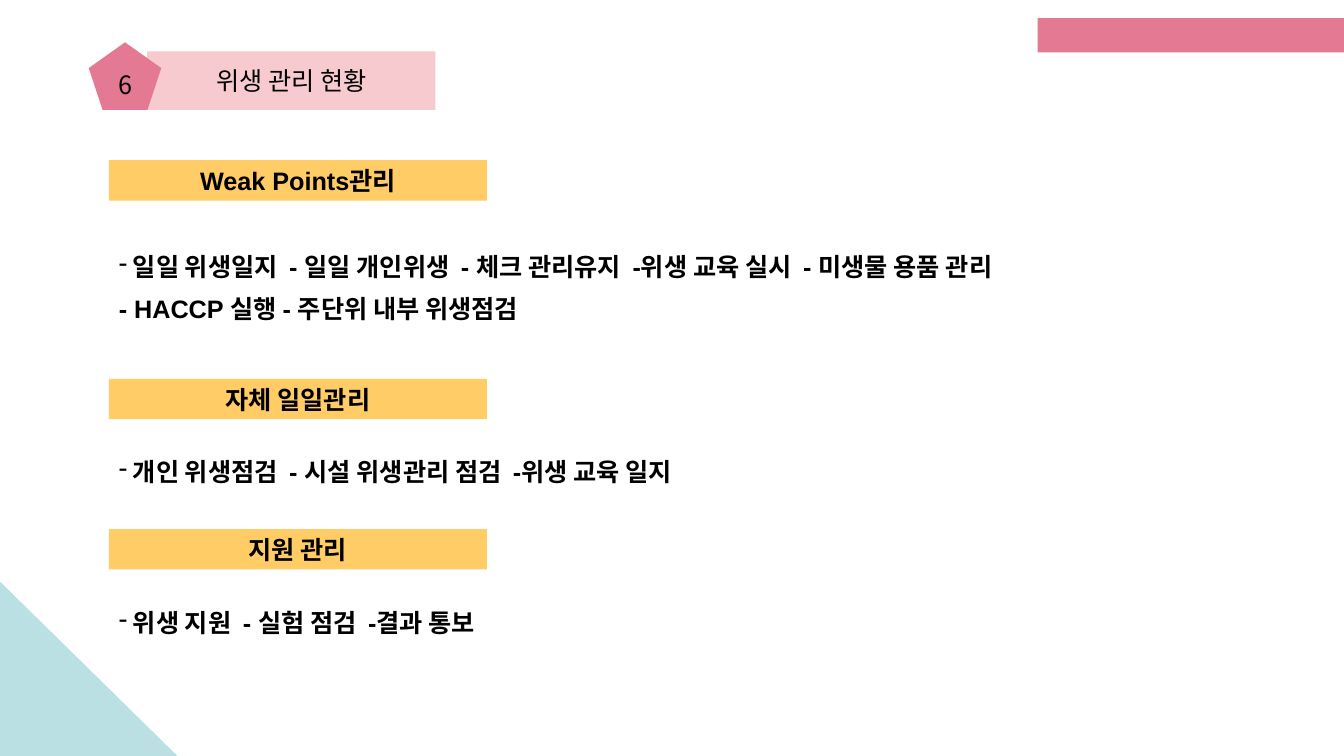
import pptx
import pptx.util
import pptx.dml.color
import pptx.enum.shapes
import pptx.enum.text
import pptx.oxml
import pptx.oxml.ns

Inches = pptx.util.Inches
KINDS = pptx.enum.shapes.MSO_SHAPE
ALIGN = pptx.enum.text.PP_ALIGN
KOREAN = "Noto Sans CJK KR"
LEFT = 1.08
PINK, PALE, AMBER, AQUA = "E37992", "F7CACF", "FFCC66", "BAE0E3"
PLAIN = {"name": KOREAN, "size": pptx.util.Pt(18), "bold": False}
STRONG = {"name": "Arial", "size": pptx.util.Pt(18), "bold": True}

# Top of heading, heading, top and height of the list, lines of the list
SECTIONS = [
    (1.59, "Weak Points관리", 2.15, 1.28,
     [" 일일 위생일지  - 일일 개인위생  - 체크 관리유지  -위생 교육 실시  - 미생물 용품 관리",
      "- HACCP 실행 - 주단위 내부 위생점검"]),
    (3.76, "자체 일일관리", 4.31, 0.61,
     [" 개인 위생점검  - 시설 위생관리 점검  -위생 교육 일지"]),
    (5.25, "지원 관리", 5.81, 0.61,
     [" 위생 지원  - 실험 점검  -결과 통보"]),
]


def color(code):
    return pptx.dml.color.RGBColor.from_string(code)


def add_node(parent, tag, **values):
    node = pptx.oxml.ns.qn(tag)
    child = parent.makeelement(node, values)
    parent.append(child)


def write(para, text, style):
    """Add one black run, with the Korean font for its Hangul."""
    run = para.add_run()
    run.text = text
    for key, value in style.items():
        setattr(run.font, key, value)
    run.font.color.rgb = color("000000")
    add_node(run.font._element, "a:ea", typeface=KOREAN)


def set_frame(frame):
    frame.word_wrap = True
    frame.vertical_anchor = pptx.enum.text.MSO_ANCHOR.MIDDLE


def add_block(slide, kind, box, fill, text="", style=PLAIN):
    """Add a filled shape without outline, with centred text if any."""
    shape = slide.shapes.add_shape(kind, *map(Inches, box))
    shape.shadow.inherit = False
    shape.fill.solid()
    shape.fill.fore_color.rgb = color(fill)
    shape.line.fill.background()
    if text:
        set_frame(shape.text_frame)
        para = shape.text_frame.paragraphs[0]
        para.alignment = ALIGN.CENTER
        write(para, text, style)


def add_list(slide, top, height, lines):
    """Add a list whose first line has a dash bullet."""
    box = slide.shapes.add_textbox(*map(Inches, (LEFT, top, 11.48, height)))
    frame = box.text_frame
    set_frame(frame)
    for index, line in enumerate(lines):
        para = frame.paragraphs[0] if index == 0 else frame.add_paragraph()
        para.line_spacing = 1.4
        if index == 0:
            add_node(para._p.get_or_add_pPr(), "a:buChar", char="-")
        write(para, line, STRONG)


def main():
    deck = pptx.Presentation()
    deck.slide_width = Inches(13.33)
    deck.slide_height = Inches(7.5)
    slide = deck.slides.add_slide(deck.slide_layouts[6])

    add_block(slide, KINDS.RIGHT_TRIANGLE, (0, 5.77, 1.76, 1.73), AQUA)
    add_block(slide, KINDS.RECTANGLE, (10.29, 0.18, 3.05, 0.34), PINK)
    add_block(slide, KINDS.RECTANGLE, (1.46, 0.51, 2.86, 0.58), PALE,
              "위생 관리 현황")
    add_block(slide, KINDS.REGULAR_PENTAGON, (0.88, 0.42, 0.72, 0.67), PINK,
              "6")
    for top, title, start, height, lines in SECTIONS:
        add_block(slide, KINDS.RECTANGLE, (LEFT, top, 3.75, 0.4), AMBER,
                  title, STRONG)
        add_list(slide, start, height, lines)
    deck.save("out.pptx")


if __name__ == "__main__":
    main()
